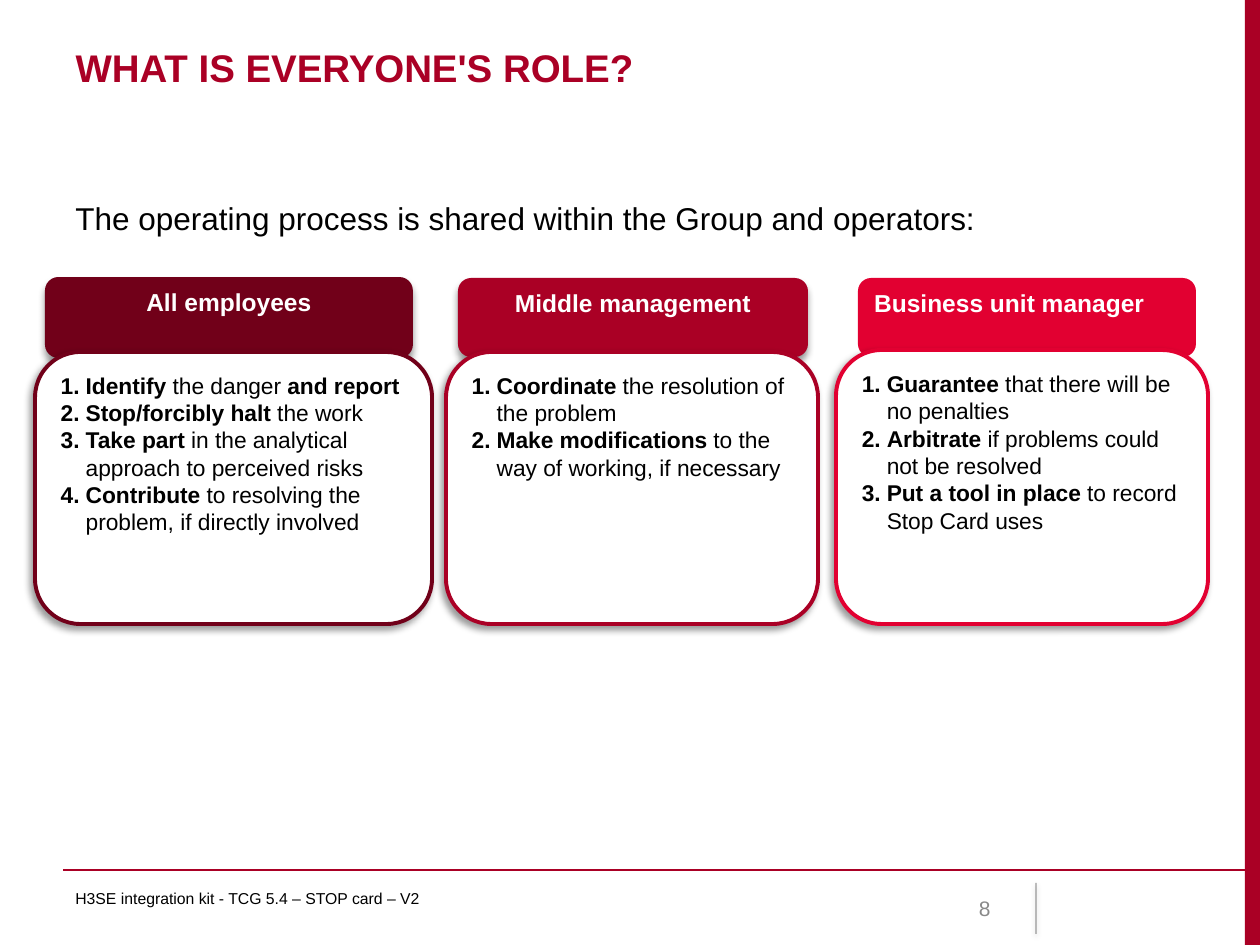
from pptx import Presentation
from pptx.dml.color import RGBColor
from pptx.enum.shapes import MSO_CONNECTOR, MSO_SHAPE
from pptx.enum.text import MSO_ANCHOR, PP_ALIGN
from pptx.oxml.ns import qn
from pptx.oxml.xmlchemy import OxmlElement
from pptx.util import Emu, Pt

SCALE = 914400 / 126
FONT = "Arial"
WINE = RGBColor(0x71, 0x00, 0x19)
CRIMSON = RGBColor(0xAA, 0x00, 0x25)
RED = RGBColor(0xE2, 0x00, 0x31)
WHITE = RGBColor(0xFF, 0xFF, 0xFF)
BLACK = RGBColor(0x00, 0x00, 0x00)
GRAY = RGBColor(0x89, 0x89, 0x89)

# Each column: colour, header (text, preset, alignment, box, shadow),
# card box, and steps as (text, bold) runs
COLUMNS = [
    (WINE,
     ("All employees", MSO_SHAPE.FLOWCHART_ALTERNATE_PROCESS,
      PP_ALIGN.CENTER, (45, 277, 368, 81), True),
     (35, 352, 397, 272),
     [[("Identify", True), (" the danger ", False), ("and report", True)],
      [("Stop/forcibly halt ", True), ("the work", False)],
      [("Take part ", True),
       ("in the analytical approach to perceived risks", False)],
      [("Contribute", True),
       (" to resolving the problem, if directly involved", False)]]),
    (CRIMSON,
     ("Middle management", MSO_SHAPE.ROUNDED_RECTANGLE,
      PP_ALIGN.CENTER, (458, 278, 350, 79), True),
     (446, 352, 372, 272),
     [[("Coordinate ", True), ("the resolution of the problem", False)],
      [("Make modifications ", True),
       ("to the way of working, if necessary", False)]]),
    (RED,
     ("Business unit manager", MSO_SHAPE.ROUNDED_RECTANGLE,
      PP_ALIGN.LEFT, (858, 278, 338, 79), False),
     (836, 350, 372, 274),
     [[("Guarantee", True), (" that there will be no penalties", False)],
      [("Arbitrate ", True), ("if problems could not be resolved", False)],
      [("Put a tool in place ", True), ("to record Stop Card uses", False)]]),
]


def px(*sizes):
    return [Emu(round(size * SCALE)) for size in sizes]


def add_node(parent, tag, **attrs):
    node = OxmlElement(tag)
    for name, value in attrs.items():
        node.set(name, str(value))
    parent.append(node)
    return node


def set_shadow(shape, blur=0, gap=0, angle=90, alpha=40):
    """Give an outer shadow in points, or none when blur is 0."""
    effects = add_node(shape._element.spPr, "a:effectLst")
    if blur:
        outer = add_node(effects, "a:outerShdw", blurRad=Pt(blur),
                         dist=Pt(gap), dir=angle * 60000, rotWithShape=0)
        color = add_node(outer, "a:srgbClr", val="000000")
        add_node(color, "a:alpha", val=alpha * 1000)


def set_font(para, size, color, bold=None):
    font = para.font
    font.name, font.size, font.bold = FONT, Pt(size), bold
    font.color.rgb = color


def add_box(shapes, kind, box, fill, line=None):
    shape = shapes.add_shape(kind, *px(*box))
    shape.fill.solid()
    shape.fill.fore_color.rgb = fill
    if line is None:
        shape.line.fill.background()
    else:
        shape.line.color.rgb = line
        shape.line.width = Pt(2.25)
    shape.text_frame.vertical_anchor = MSO_ANCHOR.TOP
    return shape


def add_rule(shapes, ends, color, width):
    rule = shapes.add_connector(MSO_CONNECTOR.STRAIGHT, *px(*ends))
    rule.line.color.rgb = color
    rule.line.width = Pt(width)
    return rule


def add_text(shapes, text, box, size, color, align=PP_ALIGN.LEFT,
             anchor=MSO_ANCHOR.TOP):
    frame = shapes.add_textbox(*px(*box)).text_frame
    frame.word_wrap = True
    frame.vertical_anchor = anchor
    para = frame.paragraphs[0]
    para.text, para.alignment = text, align
    set_font(para, size, color)


def add_step(para, runs):
    props = para._p.get_or_add_pPr()
    indent, = px(25)
    props.set("marL", str(indent))
    props.set("indent", str(-indent))
    add_node(props, "a:buFont", typeface="+mj-lt")
    add_node(props, "a:buAutoNum", type="arabicPeriod")
    para.alignment = PP_ALIGN.LEFT
    set_font(para, 13, BLACK)
    for text, bold in runs:
        run = para.add_run()
        run.text, run.font.bold = text, bold


def add_column(slide, color, header, box, steps):
    shapes = slide.shapes.add_group_shape().shapes
    text, kind, align, place, shaded = header
    head = add_box(shapes, kind, place, color)
    set_shadow(head, 4 if shaded else 0, 3)
    para = head.text_frame.paragraphs[0]
    para.text, para.alignment = text, align
    set_font(para, 14, WHITE, True)

    card = add_box(shapes, MSO_SHAPE.ROUNDED_RECTANGLE, box, WHITE, color)
    set_shadow(card, 4, 3, 135)
    frame = card.text_frame
    for i, runs in enumerate(steps):
        add_step(frame.add_paragraph() if i else frame.paragraphs[0], runs)


def set_title(slide, text):
    title = slide.shapes.title
    title.left, title.top, title.width, title.height = px(63, 38, 1133, 87)
    frame = title.text_frame
    frame.vertical_anchor = MSO_ANCHOR.TOP
    para = frame.paragraphs[0]
    para.text, para.alignment = text, PP_ALIGN.LEFT
    set_font(para, 22, CRIMSON, True)


def add_frame(shapes):
    """Draw the side band and the footer rules."""
    band = add_box(shapes, MSO_SHAPE.RECTANGLE, (1245, 0, 15, 945), CRIMSON)
    set_shadow(band)
    set_shadow(add_rule(shapes, (63, 870, 1260, 870), CRIMSON, 0.75))
    mark = add_rule(shapes, (1036, 883, 1036, 934), BLACK, 0.5)
    tint = mark._element.spPr.find(".//" + qn("a:srgbClr"))
    add_node(tint, "a:alpha", val=70000)
    set_shadow(mark, 3.1, 1.6, alpha=38)


def main():
    deck = Presentation()
    deck.slide_width, deck.slide_height = px(1260, 945)
    slide = deck.slides.add_slide(deck.slide_layouts[5])
    shapes = slide.shapes
    add_frame(shapes)
    set_title(slide, "WHAT IS EVERYONE'S ROLE?")
    for column in COLUMNS:
        add_column(slide, *column)
    add_text(shapes,
             "The operating process is shared within the Group and operators:",
             (63, 193, 1145, 50), 18, BLACK)
    add_text(shapes, "H3SE integration kit - TCG 5.4 – STOP card – V2",
             (63, 883, 766, 50), 9, BLACK)
    add_text(shapes, "8", (903, 883, 100, 50), 12, GRAY,
             PP_ALIGN.RIGHT, MSO_ANCHOR.MIDDLE)
    deck.save("out.pptx")


if __name__ == "__main__":
    main()
